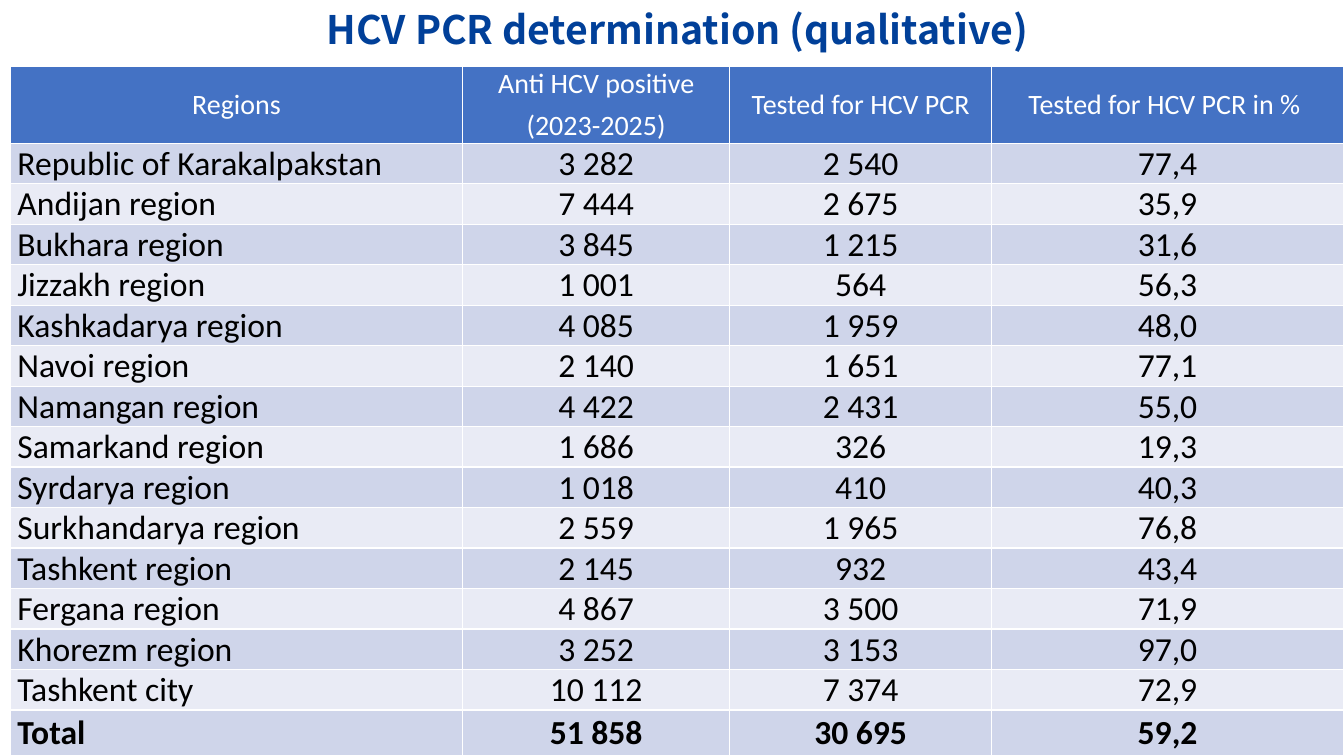
import dataclasses

import pptx
import pptx.dml.color
import pptx.enum.text
import pptx.oxml
import pptx.oxml.ns
import pptx.presentation
import pptx.slide
import pptx.table
import pptx.util

Cm = pptx.util.Cm
Pt = pptx.util.Pt
ALIGN = pptx.enum.text.PP_ALIGN
MIDDLE = pptx.enum.text.MSO_ANCHOR.MIDDLE

COLORS = {
    "title": "014099",
    "header": "4472C4",
    "odd_row": "CFD5EA",
    "even_row": "E9EBF5",
    "white": "FFFFFF",
    "black": "000000",
}
COLUMN_WIDTHS = (11.4, 6.73, 6.6, 8.87)
HEADER_HEIGHT, REGION_HEIGHT, TOTAL_HEIGHT = 1.93, 1.02, 1.16


@dataclasses.dataclass(frozen=True)
class RowStyle:
    fill: str
    color: str
    size: int
    bold: bool
    label_alignment: ALIGN
    line_spacing: float


@dataclasses.dataclass(frozen=True)
class RegionRow:
    region: str
    positive: str
    tested: str
    percent: str


HEADER = RegionRow("Regions", "Anti HCV positive\n(2023-2025)",
                   "Tested for HCV PCR", "Tested for HCV PCR in % ")
REGIONS = (
    RegionRow("Republic of Karakalpakstan", "3 282", "2 540", "77,4"),
    RegionRow("Andijan region", "7 444", "2 675", "35,9"),
    RegionRow("Bukhara region", "3 845", "1 215", "31,6"),
    RegionRow("Jizzakh region", "1 001", "564", "56,3"),
    RegionRow("Kashkadarya region", "4 085", "1 959", "48,0"),
    RegionRow("Navoi region", "2 140", "1 651", "77,1"),
    RegionRow("Namangan region", "4 422", "2 431", "55,0"),
    RegionRow("Samarkand region", "1 686", "326", "19,3"),
    RegionRow("Syrdarya region", "1 018", "410", "40,3"),
    RegionRow("Surkhandarya region", "2 559", "1 965", "76,8"),
    RegionRow("Tashkent region", "2 145", "932", "43,4"),
    RegionRow("Fergana region", "4 867", "3 500", "71,9"),
    RegionRow("Khorezm region", "3 252", "3 153", "97,0"),
    RegionRow("Tashkent city", "10 112", "7 374", "72,9"),
)
TOTAL = RegionRow("Total", "51 858", "30 695", "59,2")


def rgb(name: str) -> pptx.dml.color.RGBColor:
    return pptx.dml.color.RGBColor.from_string(COLORS[name])


def add_title(slide: pptx.slide.Slide, text: str) -> None:
    title = slide.shapes.title
    title.left, title.top = Cm(0.74), Cm(0)
    title.width, title.height = Cm(32.66), Cm(1.45)
    frame = title.text_frame
    frame.text = text
    frame.auto_size = pptx.enum.text.MSO_AUTO_SIZE.NONE
    frame.vertical_anchor = MIDDLE
    frame.margin_top = frame.margin_bottom = 0
    paragraph = frame.paragraphs[0]
    paragraph.alignment = ALIGN.CENTER
    font = paragraph.runs[0].font
    font.name, font.size, font.bold = "Noto Sans CJK SC", Pt(28), True
    font.color.rgb = rgb("title")


def set_borders(cell: pptx.table._Cell) -> None:
    properties = cell._tc.get_or_add_tcPr()
    for position, tag in enumerate(("lnL", "lnR", "lnT", "lnB")):
        line = pptx.oxml.parse_xml(
            f'<a:{tag} {pptx.oxml.ns.nsdecls("a")} w="{Pt(1)}"><a:solidFill>'
            f'<a:srgbClr val="{COLORS["white"]}"/></a:solidFill></a:{tag}>')
        properties.insert(position, line)


def fill_cell(cell: pptx.table._Cell, text: str, style: RowStyle,
              alignment: ALIGN) -> None:
    cell.margin_left = cell.margin_right = cell.margin_top = cell.margin_bottom = 0
    cell.vertical_anchor = MIDDLE
    cell.fill.solid()
    cell.fill.fore_color.rgb = rgb(style.fill)
    set_borders(cell)
    cell.text_frame.text = text
    for paragraph in cell.text_frame.paragraphs:
        paragraph.alignment = alignment
        paragraph.line_spacing = style.line_spacing
        paragraph.space_after = Pt(5)
        for side in ("marL", "marR"):
            paragraph._p.get_or_add_pPr().set(side, str(Cm(0.18)))
        font = paragraph.runs[0].font
        font.name, font.size, font.bold = "Calibri", Pt(style.size), style.bold
        font.color.rgb = rgb(style.color)


def row_style(index: int, last: int) -> RowStyle:
    if index == 0:
        return RowStyle("header", "white", 20, False, ALIGN.CENTER, 1.0)
    fill = "odd_row" if index % 2 else "even_row"
    # Slightly tight lines keep all the rows on the slide
    return RowStyle(fill, "black", 24, index == last, ALIGN.LEFT, 0.97)


def add_region_table(slide: pptx.slide.Slide) -> None:
    rows = (HEADER, *REGIONS, TOTAL)
    heights = (HEADER_HEIGHT, *[REGION_HEIGHT] * len(REGIONS), TOTAL_HEIGHT)
    table = slide.shapes.add_table(
        len(rows), len(COLUMN_WIDTHS), Cm(0.26), Cm(1.68),
        Cm(sum(COLUMN_WIDTHS)), Cm(sum(heights))).table
    for column, width in zip(table.columns, COLUMN_WIDTHS):
        column.width = Cm(width)
    for index, (row, height) in enumerate(zip(rows, heights)):
        table.rows[index].height = Cm(height)
        style = row_style(index, len(rows) - 1)
        for column, text in enumerate(dataclasses.astuple(row)):
            alignment = ALIGN.CENTER if column else style.label_alignment
            fill_cell(table.cell(index, column), text, style, alignment)


def main() -> None:
    presentation = pptx.Presentation()
    presentation.slide_width, presentation.slide_height = Cm(33.87), Cm(19.05)
    slide = presentation.slides.add_slide(presentation.slide_layouts[5])

    # Heading
    add_title(slide, "HCV PCR determination (qualitative)")

    # Regional results
    add_region_table(slide)

    presentation.save("out.pptx")


if __name__ == "__main__":
    main()
